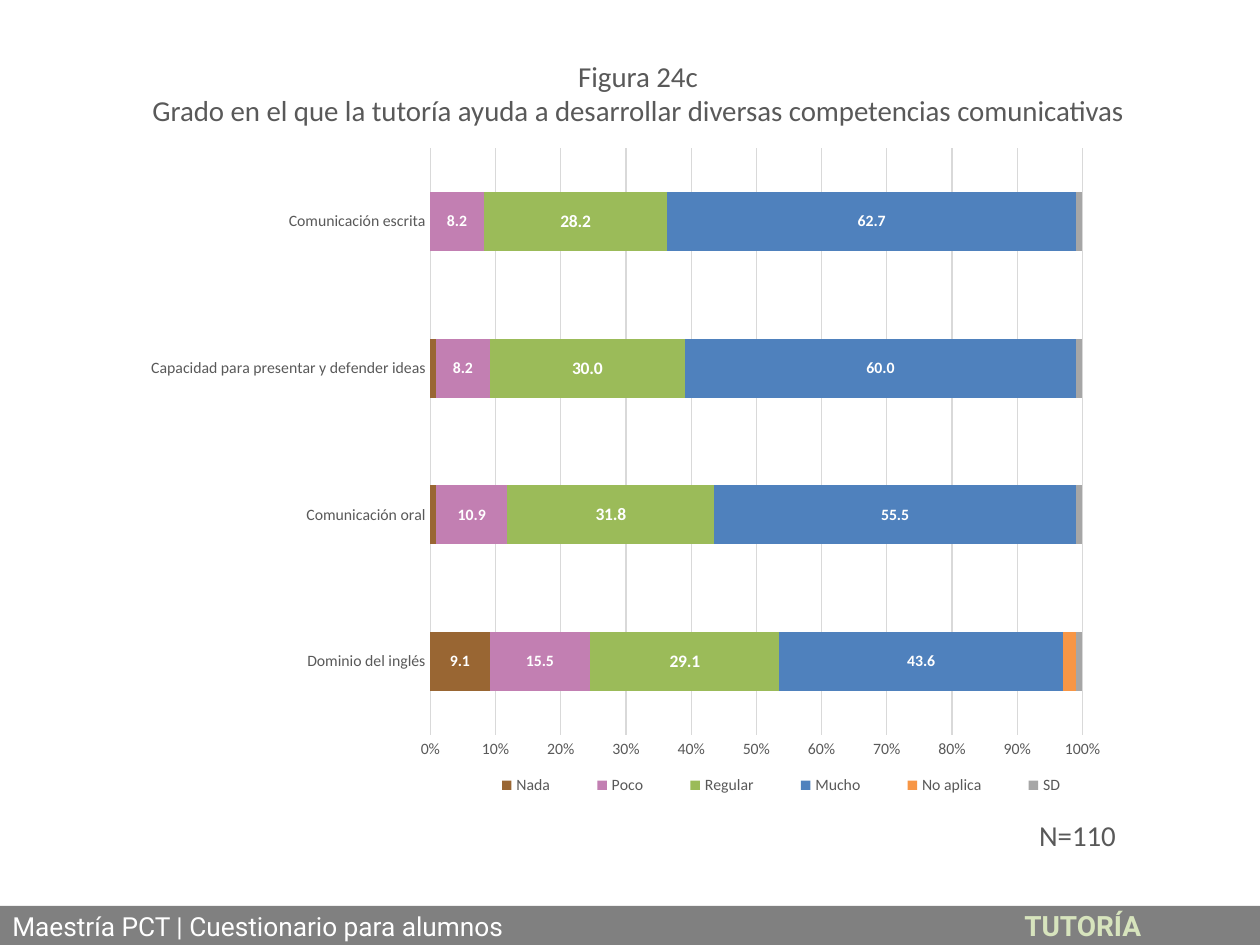
import pptx
import pptx.chart.data
import pptx.dml.color
import pptx.enum.chart
import pptx.enum.shapes
import pptx.enum.text
import pptx.oxml
import pptx.oxml.ns
import pptx.util

PX = 914400 / 126
GREY, GRID, WHITE = "595959", "D9D9D9", "FFFFFF"
CENTER = pptx.enum.text.PP_ALIGN.CENTER

CATEGORIES = ["Dominio del inglés", "Comunicación oral",
              "Capacidad para presentar y defender ideas", "Comunicación escrita"]
# Name, values, colour, label size (None for no labels)
SERIES = [
    ("Nada", (9.1, 0.9, 0.9, 0), "996633", 9),
    ("Poco", (15.5, 10.9, 8.2, 8.2), "C27FB2", 9),
    ("Regular", (29.1, 31.8, 30.0, 28.2), "9BBB59", 10),
    ("Mucho", (43.6, 55.5, 60.0, 62.7), "4F81BD", 9),
    ("No aplica", (2, 0, 0, 0), "F79646", None),
    ("SD", (1, 1, 1, 1), "A6A6A6", None),
]


def color(value):
    return pptx.dml.color.RGBColor.from_string(value)


def px(*lengths):
    return [round(length * PX) for length in lengths]


def set_font(font, size, value, name="Calibri", bold=False):
    font.size, font.name, font.bold = pptx.util.Pt(size), name, bold
    font.color.rgb = color(value)


def set_layout(element, before, x, y, width, height, inner=False):
    """Place a chart part by fractions of the chart area."""
    for old in element.findall(pptx.oxml.ns.qn("c:layout")):
        element.remove(old)
    target = '<c:layoutTarget val="inner"/>' if inner else ""
    values = "".join(f'<c:{key} val="{value}"/>' for key, value in
                     zip("xywh", (x, y, width, height)))
    layout = pptx.oxml.parse_xml(
        f'<c:layout {pptx.oxml.ns.nsdecls("c")}><c:manualLayout>{target}'
        f'<c:xMode val="edge"/><c:yMode val="edge"/>{values}'
        '</c:manualLayout></c:layout>')
    element.insert(before, layout)


class SlideBuilder:
    def __init__(self, slide):
        self.slide = slide

    def add_text(self, paragraph, text, size, value=GREY, name="Calibri", bold=False):
        run = paragraph.add_run()
        run.text = text
        set_font(run.font, size, value, name, bold)

    def title(self, box, lines):
        shape = self.slide.shapes.title
        shape.left, shape.top, shape.width, shape.height = px(*box)
        frame = shape.text_frame
        frame.word_wrap = True
        frame.auto_size = pptx.enum.text.MSO_AUTO_SIZE.NONE
        frame.vertical_anchor = pptx.enum.text.MSO_ANCHOR.TOP
        for index, line in enumerate(lines):
            paragraph = frame.add_paragraph() if index else frame.paragraphs[0]
            paragraph.alignment = CENTER
            self.add_text(paragraph, line, 16.5)

    def note(self, box, text):
        frame = self.slide.shapes.add_textbox(*px(*box)).text_frame
        frame.word_wrap = False
        frame.paragraphs[0].alignment = CENTER
        self.add_text(frame.paragraphs[0], text, 16.5)

    def footer(self, box, left_text, right_text, tab):
        shape = self.slide.shapes.add_shape(
            pptx.enum.shapes.MSO_SHAPE.RECTANGLE, *px(*box))
        shape.shadow.inherit = False
        shape.fill.solid()
        shape.fill.fore_color.rgb = color("808080")
        shape.line.fill.background()
        frame = shape.text_frame
        frame.vertical_anchor = pptx.enum.text.MSO_ANCHOR.MIDDLE
        paragraph = frame.paragraphs[0]
        paragraph.alignment = pptx.enum.text.PP_ALIGN.LEFT
        paragraph._p.get_or_add_pPr().append(pptx.oxml.parse_xml(
            f'<a:tabLst {pptx.oxml.ns.nsdecls("a")}>'
            f'<a:tab pos="{px(tab)[0]}" algn="l"/></a:tabLst>'))
        self.add_text(paragraph, left_text + "\t", 15, WHITE, "Roboto")
        self.add_text(paragraph, right_text, 16, "D7E4BD", "Roboto", True)

    def chart(self, box):
        data = pptx.chart.data.CategoryChartData(number_format="0.0")
        data.categories = CATEGORIES
        for name, values, _, _ in SERIES:
            data.add_series(name, values)
        chart = self.slide.shapes.add_chart(
            pptx.enum.chart.XL_CHART_TYPE.BAR_STACKED_100, *px(*box), data).chart
        chart.has_title = False
        set_font(chart.font, 9, GREY)

        # Bars and their labels; slivers under 5 stay unlabelled
        plot = chart.plots[0]
        plot.gap_width, plot.overlap, plot.vary_by_categories = 150, 100, False
        for series, (_, _, fill, size) in zip(plot.series, SERIES):
            series.format.fill.solid()
            series.format.fill.fore_color.rgb = color(fill)
            if size:
                labels = series.data_labels
                labels.show_value = True
                labels.number_format = '[<5]"";0.0'
                labels.number_format_is_linked = False
                set_font(labels.font, size, WHITE, bold=True)

        # Axes
        for axis in (chart.category_axis, chart.value_axis):
            axis.major_tick_mark = pptx.enum.chart.XL_TICK_MARK.NONE
            axis.minor_tick_mark = pptx.enum.chart.XL_TICK_MARK.NONE
            set_font(axis.tick_labels.font, 9, GREY)
        chart.value_axis.has_major_gridlines = True
        chart.value_axis.format.line.fill.background()
        chart.value_axis.tick_labels.number_format = "0%"
        chart.value_axis.tick_labels.number_format_is_linked = False
        for line in (chart.category_axis.format.line,
                     chart.value_axis.major_gridlines.format.line):
            line.color.rgb = color(GRID)
            line.width = pptx.util.Pt(0.75)

        # Legend and plot area
        chart.has_legend = True
        legend = chart.legend
        legend.position = pptx.enum.chart.XL_LEGEND_POSITION.BOTTOM
        legend.include_in_layout = False
        set_font(legend.font, 9, GREY)
        set_layout(legend._element, 1, 0.33, 0.94, 0.65, 0.05)
        plot_area = chart._chartSpace.chart.plotArea
        set_layout(plot_area, 0, 0.3, 0.02, 0.66, 0.87, inner=True)


def main():
    presentation = pptx.Presentation()
    presentation.slide_width, presentation.slide_height = px(1260, 945)
    builder = SlideBuilder(
        presentation.slides.add_slide(presentation.slide_layouts[5]))
    builder.title((134, 52, 1008, 152), [
        "Figura 24c",
        "Grado en el que la tutoría ayuda a desarrollar diversas "
        "competencias comunicativas"])
    builder.chart((134, 135, 988, 674))
    builder.note((1026, 811, 103, 48), "N=110")
    builder.footer((0, 906, 1260, 39), "Maestría PCT | Cuestionario para alumnos",
                   "TUTORÍA", 1012)
    presentation.save("out.pptx")


if __name__ == "__main__":
    main()
